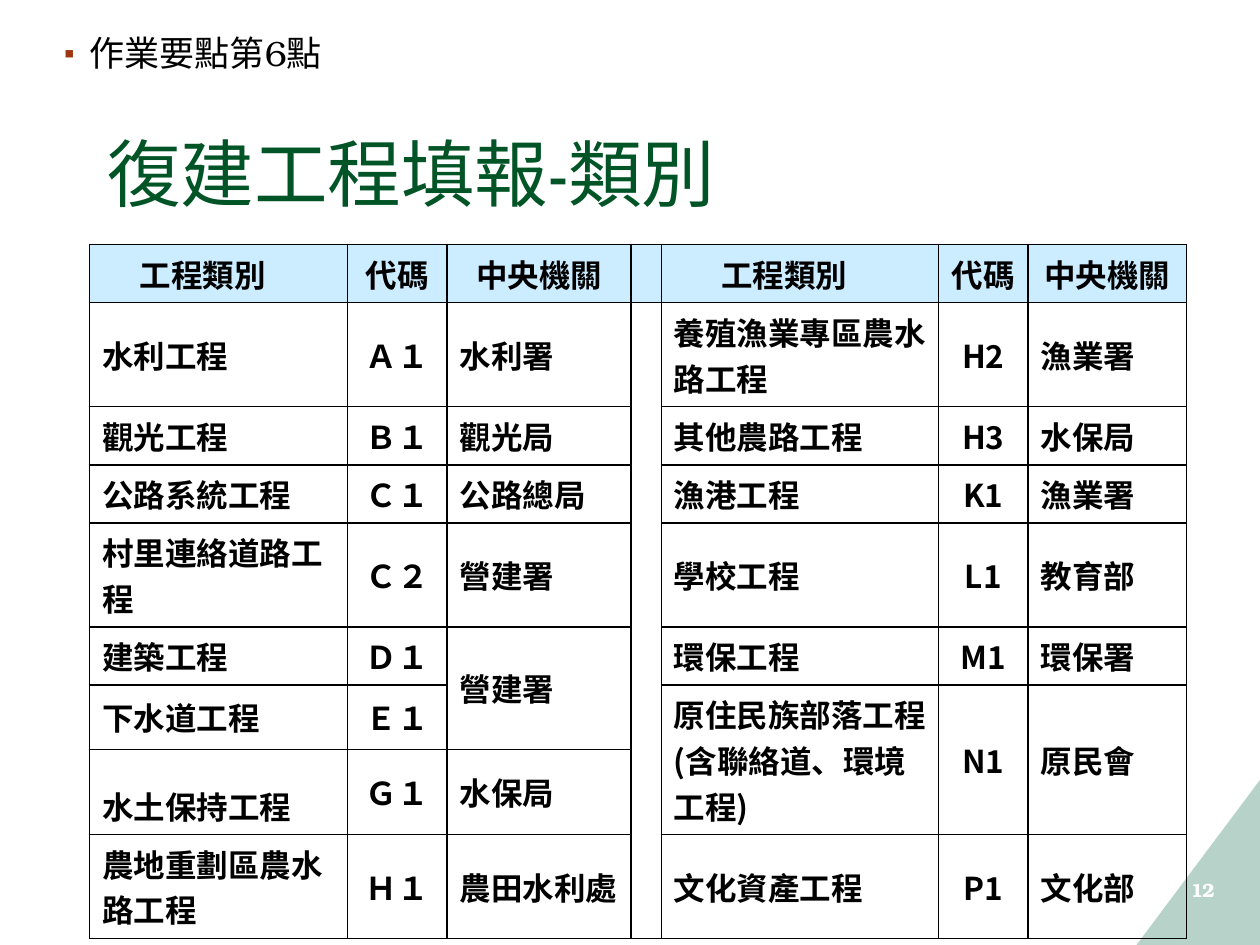
from lxml.etree import SubElement
from pptx import Presentation
from pptx.dml.color import RGBColor
from pptx.enum.shapes import MSO_SHAPE
from pptx.enum.text import MSO_ANCHOR, MSO_AUTO_SIZE, PP_ALIGN
from pptx.oxml.ns import qn
from pptx.util import Inches, Pt

CJK = "Noto Sans CJK SC"
SERIF = "TeX Gyre Bonum"
TITLE = dict(size=Pt(42), name="Arial Narrow", bold=False)
BODY = dict(size=Pt(20), name=SERIF, bold=False)
CELL = dict(size=Pt(18), name=CJK, bold=True)
PAGE = dict(size=Pt(11), name=SERIF, bold=True)

WIDTHS = [2.05, 0.79, 1.46, 0.24, 2.2, 0.71, 1.26]
HEIGHTS = [0.42, 0.73, 0.42, 0.42, 0.73, 0.42, 0.51, 0.53, 0.73]
# Blank entries are the gap column or lie under a merged cell
ROWS = [
    ["工程類別　", "代碼", "中央機關", "", "工程類別　", "代碼", "中央機關"],
    ["水利工程　", "Ａ１", "水利署", "", "養殖漁業專區農水路工程　", "H2", "漁業署"],
    ["觀光工程　", "Ｂ１", "觀光局", "", "其他農路工程", "H3", "水保局"],
    ["公路系統工程　", "Ｃ１", "公路總局", "", "漁港工程　", "K1", "漁業署"],
    ["村里連絡道路工程", "Ｃ２", "營建署", "", "學校工程　", "L1", "教育部"],
    ["建築工程　", "Ｄ１", "營建署", "", "環保工程　", "M1", "環保署"],
    ["下水道工程", "Ｅ１", "", "", "原住民族部落工程(含聯絡道、環境工程)　", "N1", "原民會"],
    ["水土保持工程　", "Ｇ１", "水保局", "", "", "", ""],
    ["農地重劃區農水路工程　", "Ｈ１", "農田水利處", "", "文化資產工程", "P1", "文化部"],
]
# First row, last row, column
MERGES = [(1, 8, 3), (5, 6, 2), (6, 7, 4), (6, 7, 5), (6, 7, 6)]
LOW = {(0, 1), (0, 4), (0, 5), (0, 6), (7, 0)}


def paint(color, value):
    color.rgb = RGBColor.from_string(value)


def write(frame, text, style, color="000000", align=PP_ALIGN.LEFT):
    para = frame.paragraphs[0]
    para.alignment = align
    run = para.add_run()
    run.text = text
    for key, value in style.items():
        setattr(run.font, key, value)
    paint(run.font.color, color)
    SubElement(run.font._element, qn("a:ea"), typeface=CJK)
    return para


def place(shape, left, top, width, height):
    shape.left, shape.top = Inches(left), Inches(top)
    shape.width, shape.height = Inches(width), Inches(height)


def set_frame(shape, anchor):
    frame = shape.text_frame
    frame.word_wrap = True
    frame.auto_size = MSO_AUTO_SIZE.NONE
    frame.vertical_anchor = anchor
    return frame


def add_bullet(para):
    props = para._p.get_or_add_pPr()
    props.set("marL", str(Inches(0.2)))
    props.set("indent", str(Inches(-0.2)))
    tint = SubElement(props, qn("a:buClr"))
    SubElement(tint, qn("a:srgbClr"), val="9E3611")
    SubElement(props, qn("a:buSzPct"), val="85000")
    SubElement(props, qn("a:buChar"), char="▪")


def add_heads(slide):
    title, body = slide.shapes.title, slide.placeholders[1]
    place(title, 0.75, 0.53, 8.5, 1.76)
    frame = set_frame(title, MSO_ANCHOR.MIDDLE)
    write(frame, "復建工程填報-類別", TITLE, "005426").line_spacing = 0.9

    place(body, 0.41, 0.24, 9, 4.95)
    frame = set_frame(body, MSO_ANCHOR.TOP)
    para = write(frame, "作業要點第6點", BODY)
    para.line_spacing = 0.9
    para.space_before = Pt(0)
    add_bullet(para)


def add_corner(slide):
    shape = slide.shapes.add_shape(
        MSO_SHAPE.RIGHT_TRIANGLE, Inches(9.02), Inches(6.19), Inches(0.98), Inches(1.31))
    shape.shadow.inherit = False
    shape.fill.solid()
    paint(shape.fill.fore_color, "B6D2C9")
    shape.line.fill.background()
    shape._element.spPr.xfrm.set("flipH", "1")


def add_page(slide):
    box = slide.shapes.add_textbox(
        Inches(9.28), Inches(6.86), Inches(0.53), Inches(0.4))
    frame = set_frame(box, MSO_ANCHOR.MIDDLE)
    para = write(frame, "12", PAGE, "FFFFFF", PP_ALIGN.CENTER)
    para.runs[0].font._element.set("spc", "-70")


def add_border(cell):
    props = cell._tc.get_or_add_tcPr()
    for side in ("lnL", "lnR", "lnT", "lnB"):
        line = SubElement(props, qn("a:" + side), w=str(Pt(1)))
        fill = SubElement(line, qn("a:solidFill"))
        SubElement(fill, qn("a:srgbClr"), val="000000")


def fill_cell(cell, text, row, col):
    add_border(cell)
    if row == 0:
        cell.fill.solid()
        paint(cell.fill.fore_color, "CCECFF")
    else:
        cell.fill.background()
    low = (row, col) in LOW
    cell.vertical_anchor = MSO_ANCHOR.BOTTOM if low else MSO_ANCHOR.MIDDLE
    if text:
        mid = row == 0 or col in (1, 5)
        align = PP_ALIGN.CENTER if mid else PP_ALIGN.LEFT
        write(cell.text_frame, text, CELL, align=align)


def add_grid(slide):
    table = slide.shapes.add_table(
        len(ROWS), len(WIDTHS), Inches(0.71), Inches(1.94),
        Inches(sum(WIDTHS)), Inches(sum(HEIGHTS))).table
    table.first_row = table.horz_banding = False
    for column, width in zip(table.columns, WIDTHS):
        column.width = Inches(width)
    for line, height in zip(table.rows, HEIGHTS):
        line.height = Inches(height)
    for row, texts in enumerate(ROWS):
        for col, text in enumerate(texts):
            fill_cell(table.cell(row, col), text, row, col)
    for first, last, col in MERGES:
        table.cell(first, col).merge(table.cell(last, col))


def main():
    deck = Presentation()
    deck.slide_width, deck.slide_height = Inches(10), Inches(7.5)
    slide = deck.slides.add_slide(deck.slide_layouts[1])
    add_heads(slide)
    add_corner(slide)
    add_page(slide)
    add_grid(slide)
    deck.save("out.pptx")


if __name__ == "__main__":
    main()
